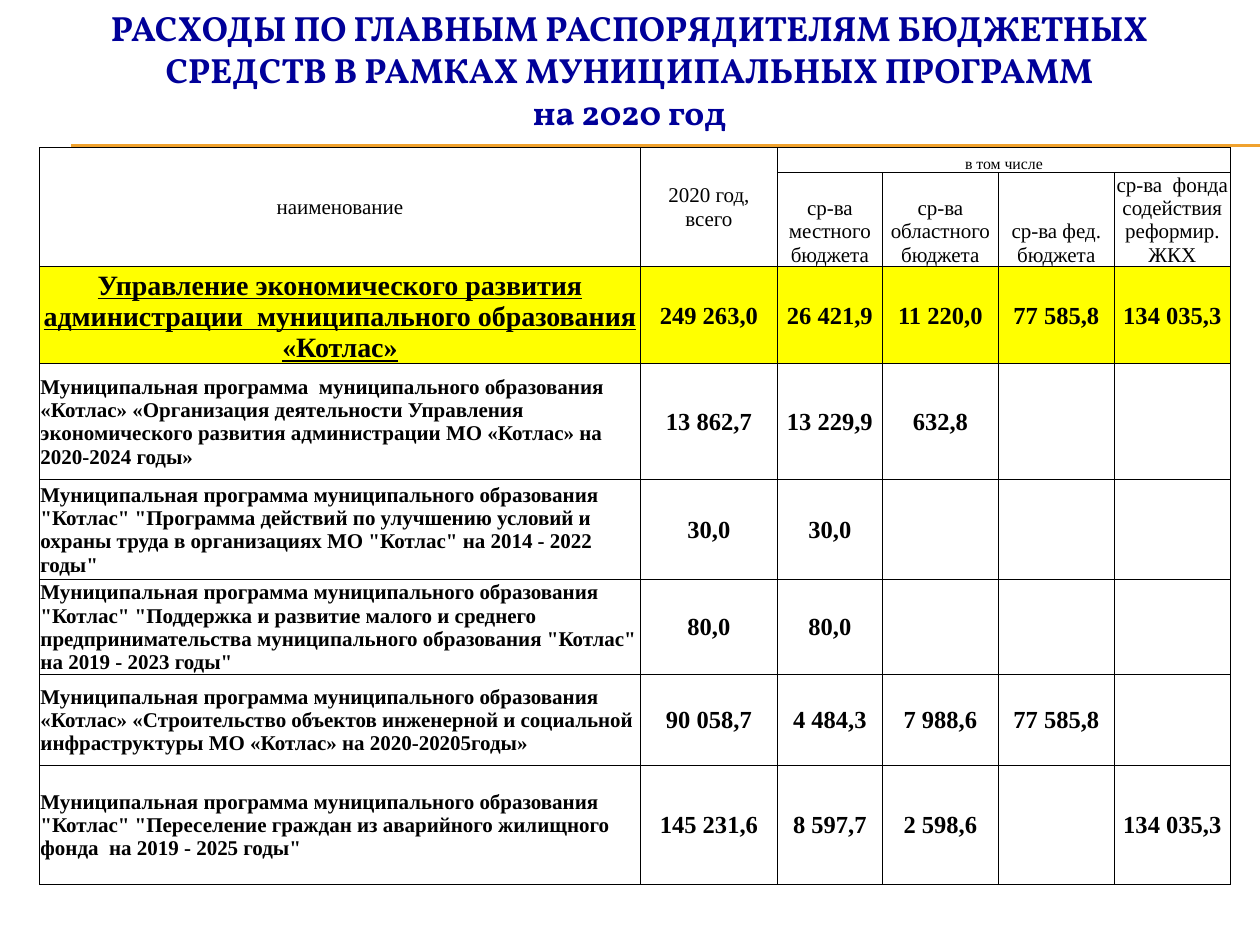
from lxml import etree
from pptx import Presentation
from pptx.dml.color import RGBColor
from pptx.enum.shapes import MSO_CONNECTOR
from pptx.enum.text import MSO_ANCHOR, PP_ALIGN
from pptx.oxml.ns import qn
from pptx.util import Pt

PX = 914400 / 126
CENTER, LEFT = PP_ALIGN.CENTER, PP_ALIGN.LEFT
MIDDLE, BOTTOM = MSO_ANCHOR.MIDDLE, MSO_ANCHOR.BOTTOM
STRAIGHT = MSO_CONNECTOR.STRAIGHT
TITLE = ("РАСХОДЫ ПО ГЛАВНЫМ РАСПОРЯДИТЕЛЯМ БЮДЖЕТНЫХ СРЕДСТВ "
         "В РАМКАХ МУНИЦИПАЛЬНЫХ ПРОГРАММ\vна 2020 год")
COLUMN_WIDTHS = [601, 137, 105, 116, 116, 116]
ROW_HEIGHTS = [25, 94, 97, 116, 100, 95, 91, 119]
HEADINGS = [
    ["наименование", "2020 год,\vвсего", "в том числе", "", "", ""],
    ["", "", "ср-ва местного бюджета", "ср-ва областного бюджета",
     "ср-ва фед. бюджета", "ср-ва  фонда содействия реформир. ЖКХ"],
]
DEPARTMENT = [
    "Управление экономического развития администрации  муниципального образования «Котлас»",
    "249 263,0", "26 421,9", "11 220,0", "77 585,8", "134 035,3"]
PROGRAMMES = [
    ["Муниципальная программа  муниципального образования «Котлас» «Организация деятельности "
     "Управления экономического развития администрации МО «Котлас» на 2020-2024 годы»",
     "13 862,7", "13 229,9", "632,8", "", ""],
    ['Муниципальная программа муниципального образования "Котлас" "Программа действий по '
     'улучшению условий и охраны труда в организациях МО "Котлас" на 2014 - 2022 годы"',
     "30,0", "30,0", "", "", ""],
    ['Муниципальная программа муниципального образования "Котлас" "Поддержка и развитие малого '
     'и среднего предпринимательства муниципального образования "Котлас" на 2019 - 2023 годы"',
     "80,0", "80,0", "", "", ""],
    ["Муниципальная программа муниципального образования «Котлас» «Строительство объектов "
     "инженерной и социальной инфраструктуры МО «Котлас» на 2020-20205годы»",
     "90 058,7", "4 484,3", "7 988,6", "77 585,8", ""],
    ['Муниципальная программа муниципального образования "Котлас" "Переселение граждан из '
     'аварийного жилищного фонда  на 2019 - 2025 годы"',
     "145 231,6", "8 597,7", "2 598,6", "", "134 035,3"],
]


def px(length):
    """Turn pixels into EMU."""
    return round(length * PX)


def color(hex_value):
    """Turn a hex string into a colour."""
    return RGBColor.from_string(hex_value)


def apply(target, values):
    """Set each attribute in values on target."""
    for attribute, value in values.items():
        setattr(target, attribute, value)


def write(frame, text, align, hex_value, **font_values):
    """Write one formatted paragraph into a text frame."""
    frame.text = text
    paragraph = frame.paragraphs[0]
    paragraph.alignment = align
    for run in paragraph.runs:
        apply(run.font, font_values)
        run.font.color.rgb = color(hex_value)


def add_rule(slide, y):
    """Draw a thin horizontal rule to the right edge of the slide."""
    rule = slide.shapes.add_connector(STRAIGHT, px(71), px(y), px(1260), px(y))
    rule.line.color.rgb = color("F0A22E")
    rule.line.width = Pt(0.75)
    etree.SubElement(rule._element.spPr, qn("a:effectLst"))


def add_title(slide):
    """Place and format the slide title."""
    title = slide.shapes.title
    apply(title, {"left": px(44), "top": 0, "width": px(1171), "height": px(139)})
    frame = title.text_frame
    apply(frame, {"word_wrap": True, "vertical_anchor": MIDDLE})
    write(frame, TITLE, CENTER, "000099", name="Vollkorn", size=Pt(20), bold=True)


def set_borders(cell):
    """Give a cell thin black borders on all sides."""
    properties = cell._tc.get_or_add_tcPr()
    for position, side in enumerate(("lnL", "lnR", "lnT", "lnB")):
        border = etree.Element(qn(f"a:{side}"), w=str(Pt(0.5)))
        fill = etree.SubElement(border, qn("a:solidFill"))
        etree.SubElement(fill, qn("a:srgbClr"), val="000000")
        properties.insert(position, border)


def fill_cell(cell, text, align=CENTER, anchor=MIDDLE, background=None, **font_values):
    """Write a cell and set its margins, background and borders."""
    apply(cell, {"margin_left": px(1), "margin_right": px(1), "margin_top": px(1),
                 "margin_bottom": 0, "vertical_anchor": anchor})
    if background:
        cell.fill.solid()
        cell.fill.fore_color.rgb = color(background)
    else:
        cell.fill.background()
    write(cell.text_frame, text, align, "000000", name="Times New Roman", **font_values)
    set_borders(cell)


def cell_format(row, column):
    """Return the format of a table cell by its role."""
    if row < len(HEADINGS):
        grouped = column > 1
        return {"anchor": BOTTOM if grouped else MIDDLE, "bold": False,
                "size": Pt(9 if grouped and row == 0 else 12)}
    department = row == len(HEADINGS)
    values = {"bold": True, "size": Pt(14), "background": "FFFF00" if department else None}
    if column == 0 and department:
        values.update(size=Pt(16), underline=True, anchor=BOTTOM)
    elif column == 0:
        values.update(size=Pt(12), align=LEFT)
    return values


def add_expenses(slide):
    """Build the table of expenses by programme."""
    rows = HEADINGS + [DEPARTMENT] + PROGRAMMES
    table = slide.shapes.add_table(
        len(rows), len(COLUMN_WIDTHS), px(39.5), px(147.5),
        px(sum(COLUMN_WIDTHS)), px(sum(ROW_HEIGHTS))).table
    apply(table, {"first_row": False, "horz_banding": False})
    for column, width in zip(table.columns, COLUMN_WIDTHS):
        column.width = px(width)
    for row, height in zip(table.rows, ROW_HEIGHTS):
        row.height = px(height)
    for row, texts in enumerate(rows):
        for column, text in enumerate(texts):
            fill_cell(table.cell(row, column), text, **cell_format(row, column))
    for first, last in (((0, 0), (1, 0)), ((0, 1), (1, 1)), ((0, 2), (0, 5))):
        table.cell(*first).merge(table.cell(*last))


def main():
    """Build and save the slide."""
    presentation = Presentation()
    apply(presentation, {"slide_width": px(1260), "slide_height": px(945)})
    slide = presentation.slides.add_slide(presentation.slide_layouts[5])
    for y in (145, 146):
        add_rule(slide, y)
    add_expenses(slide)
    add_title(slide)
    presentation.save("out.pptx")


if __name__ == "__main__":
    main()
